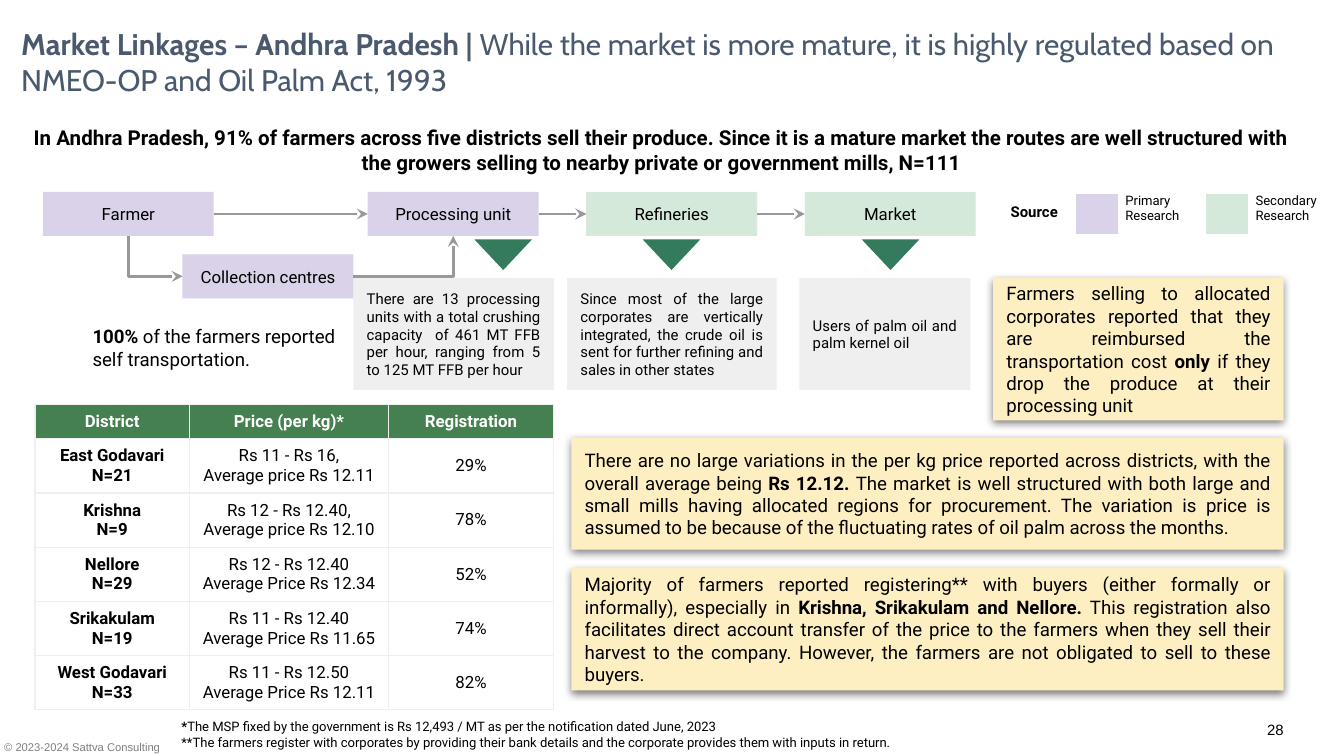
from typing import NamedTuple

from lxml.etree import SubElement
from pptx import Presentation
from pptx.dml.color import RGBColor
from pptx.enum.dml import MSO_THEME_COLOR
from pptx.enum.shapes import MSO_CONNECTOR, MSO_SHAPE
from pptx.enum.text import MSO_ANCHOR, MSO_AUTO_SIZE, PP_ALIGN
from pptx.oxml.ns import qn
from pptx.util import Cm, Pt

BLACK = RGBColor(0x00, 0x00, 0x00)
WHITE = RGBColor(0xFF, 0xFF, 0xFF)
SLATE = RGBColor(0x4A, 0x59, 0x6E)
GREY = RGBColor(0x7F, 0x7F, 0x7F)
ARROW_GREY = RGBColor(0x99, 0x99, 0x99)
PALE_GREY = RGBColor(0xEF, 0xEF, 0xEF)
LILAC = RGBColor(0xD9, 0xD2, 0xE9)
MINT = RGBColor(0xD4, 0xE9, 0xD9)
CREAM = RGBColor(0xFE, 0xEF, 0xC3)
HEADER_GREEN = RGBColor(0x44, 0x80, 0x50)
POINTER_GREEN = RGBColor(0x34, 0x7A, 0x5C)

STEP_WIDTH, STEP_HEIGHT, FLOW_TOP = 3.23, 0.83, 3.63
STEP_PITCH, PROCESSING_LEFT = 4.13, 6.95
CARD_TOP, CARD_HEIGHT = 5.26, 2.11
TOP, LEFT, BOTTOM, RIGHT = range(4)  # connection sites of a rectangle


class Span(NamedTuple):
    text: str
    bold: bool = False


class Area(NamedTuple):
    left: float
    top: float
    width: float
    height: float

    def lengths(self):
        return [Cm(value) for value in self]


class Step(NamedTuple):
    label: str
    left: float
    top: float
    fill: RGBColor


class Panel(NamedTuple):
    area: Area
    spans: list[Span]


class District(NamedTuple):
    name: str
    farmers: int
    prices: str
    average: str
    registration: str


STEPS = [
    Step("Farmer", 0.81, FLOW_TOP, LILAC),
    Step("Collection centres", 3.45, 4.81, LILAC),
    Step("Processing unit", PROCESSING_LEFT, FLOW_TOP, LILAC),
    Step("Refineries", PROCESSING_LEFT + STEP_PITCH, FLOW_TOP, MINT),
    Step("Market", PROCESSING_LEFT + 2 * STEP_PITCH, FLOW_TOP, MINT),
]
POINTER_CENTRES = [9.51, 12.69, 16.83]
CARDS = [
    Panel(Area(6.68, CARD_TOP, 3.79, CARD_HEIGHT), [Span(
        "There are 13 processing units with a total crushing capacity  of 461 MT FFB "
        "per hour, ranging from 5 to 125 MT FFB per hour")]),
    Panel(Area(10.72, CARD_TOP, 3.96, CARD_HEIGHT), [Span(
        "Since most of the large corporates are vertically integrated, the crude oil "
        "is sent for further refining and sales in other states")]),
    Panel(Area(15.11, CARD_TOP, STEP_WIDTH, CARD_HEIGHT),
          [Span("Users of palm oil and palm kernel oil")]),
]
NOTES = [
    Panel(Area(18.77, CARD_TOP, 5.49, 2.69), [
        Span("Farmers selling to allocated corporates reported that they are reimbursed "
             "the transportation cost "),
        Span("only", True),
        Span(" if they drop the produce at their processing unit")]),
    Panel(Area(10.8, 8.28, 13.46, 2.11), [
        Span("There are no large variations in the per kg price reported across "
             "districts, with the overall average being "),
        Span("Rs 12.12. ", True),
        Span("The market is well structured with both large and small mills having "
             "allocated regions for procurement. The variation is price is assumed to be "
             "because of the fluctuating rates of oil palm across the months.")]),
    Panel(Area(10.8, 10.74, 13.46, 2.31), [
        Span("Majority of farmers reported registering** with buyers (either formally or "
             "informally), especially in "),
        Span("Krishna, Srikakulam and Nellore. ", True),
        Span("This registration also facilitates direct account transfer of the price to "
             "the farmers when they sell their harvest to the company. However, the "
             "farmers are not obligated to sell to these buyers.")]),
]
DISTRICTS = [
    District("East Godavari", 21, "Rs 11 - Rs 16,", "Average price Rs 12.11", "29%"),
    District("Krishna", 9, "Rs 12 - Rs 12.40,", "Average price Rs 12.10", "78%"),
    District("Nellore", 29, "Rs 12 - Rs 12.40", "Average Price Rs 12.34", "52%"),
    District("Srikakulam", 19, "Rs 11 - Rs 12.40", "Average Price Rs 11.65", "74%"),
    District("West Godavari", 33, "Rs 11 - Rs 12.50", "Average Price Rs 12.11", "82%"),
]


def write(frame, paragraphs, *, size, font="Roboto", color=BLACK, align=PP_ALIGN.LEFT):
    """Fill a text frame; each paragraph is a list of spans."""
    frame.word_wrap = True
    for index, spans in enumerate(paragraphs):
        para = frame.paragraphs[0] if index == 0 else frame.add_paragraph()
        para.alignment = align
        for span in spans:
            run = para.add_run()
            run.text = span.text
            run.font.name, run.font.size = font, Pt(size)
            run.font.bold, run.font.color.rgb = span.bold, color


def set_margins(holder, across: float, down: float):
    holder.margin_left = holder.margin_right = Cm(across)
    holder.margin_top = holder.margin_bottom = Cm(down)


def add_text(page, area: Area, paragraphs, *, anchor=MSO_ANCHOR.TOP, margins=(0.25, 0.25), **style):
    frame = page.shapes.add_textbox(*area.lengths()).text_frame
    set_margins(frame, *margins)
    frame.vertical_anchor = anchor
    write(frame, paragraphs, **style)


def add_block(page, area: Area, fill: RGBColor, kind=MSO_SHAPE.RECTANGLE):
    block = page.shapes.add_shape(kind, *area.lengths())
    block.shadow.inherit = False
    block.fill.solid()
    block.fill.fore_color.rgb = fill
    block.line.fill.background()
    return block


def add_panel(page, panel: Panel, fill: RGBColor, *, size, align=PP_ALIGN.JUSTIFY):
    block = add_block(page, panel.area, fill)
    set_margins(block.text_frame, 0.25, 0.25)
    block.text_frame.vertical_anchor = MSO_ANCHOR.MIDDLE
    write(block.text_frame, [panel.spans], size=size, align=align)
    return block


def add_drop_shadow(block):
    effects = block._element.spPr.find(qn("a:effectLst"))
    shadow = SubElement(effects, qn("a:outerShdw"), blurRad=str(Pt(4.5)), dist=str(Pt(1.5)),
                        dir="5400000", algn="bl", rotWithShape="0")
    shade = SubElement(shadow, qn("a:srgbClr"), val=str(BLACK))
    SubElement(shade, qn("a:alpha"), val="50000")


def add_arrow(page, start, start_site: int, end, end_site: int):
    """Link two steps; an arrow that starts or ends at a bottom site has one bend."""
    bent = BOTTOM in (start_site, end_site)
    kind = MSO_CONNECTOR.ELBOW if bent else MSO_CONNECTOR.STRAIGHT
    arrow = page.shapes.add_connector(kind, 0, 0, 0, 0)
    arrow.begin_connect(start, start_site)
    arrow.end_connect(end, end_site)
    arrow.line.color.rgb = ARROW_GREY
    arrow.line.width = Pt(1.5)
    properties = arrow._element.spPr
    SubElement(arrow.line._get_or_add_ln(), qn("a:tailEnd"), type="stealth")
    SubElement(properties, qn("a:effectLst"))
    if bent:
        properties.find(qn("a:prstGeom")).set("prst", "bentConnector2")
    if start_site == BOTTOM:  # leaves downwards: a quarter turn about the centre
        left, top, width, height = arrow.left, arrow.top, arrow.width, arrow.height
        arrow.left, arrow.top = left + (width - height) // 2, top + (height - width) // 2
        arrow.width, arrow.height = height, width
        frame = properties.find(qn("a:xfrm"))
        frame.set("rot", "16200000")
        frame.set("flipH", "1")


def add_table(page, left: float, top: float, widths, heights):
    table = page.shapes.add_table(len(heights), len(widths), Cm(left), Cm(top),
                                  Cm(sum(widths)), Cm(sum(heights))).table
    table.first_row = table.horz_banding = False
    for column, width in zip(table.columns, widths):
        column.width = Cm(width)
    for row, height in zip(table.rows, heights):
        row.height = Cm(height)
    return table


def fill_cell(cell, fill: RGBColor, margins=(0.25, 0.13)):
    set_margins(cell, *margins)
    cell.fill.solid()
    cell.fill.fore_color.rgb = fill


def add_borders(cell):
    properties = cell._tc.get_or_add_tcPr()
    for index, side in enumerate(("a:lnL", "a:lnR", "a:lnT", "a:lnB")):
        line = properties.makeelement(qn(side), {"w": str(Pt(0.75))})
        SubElement(SubElement(line, qn("a:solidFill")), qn("a:srgbClr"), val=str(PALE_GREY))
        properties.insert(index, line)


def add_district_table(page):
    table = add_table(page, 0.66, 7.65, [2.92, 3.76, 3.12], [0.62] + [1.0] * len(DISTRICTS))
    rows = [[[[Span(text, True)]] for text in ("District", "Price (per kg)*", "Registration")]]
    rows += [[[[Span(district.name, True)], [Span(f"N={district.farmers}", True)]],
              [[Span(district.prices)], [Span(district.average)]],
              [[Span(district.registration)]]] for district in DISTRICTS]
    for row_index, row in enumerate(rows):
        header = row_index == 0
        for column_index, paragraphs in enumerate(row):
            cell = table.cell(row_index, column_index)
            fill_cell(cell, HEADER_GREEN if header else WHITE)
            cell.vertical_anchor = MSO_ANCHOR.TOP if header else MSO_ANCHOR.MIDDLE
            write(cell.text_frame, paragraphs, size=9, align=PP_ALIGN.CENTER,
                  color=WHITE if header else BLACK)
            add_borders(cell)


def add_legend(page):
    add_text(page, Area(18.85, 3.84, 1.45, 0.33), [[Span("Source", True)]], size=8,
             anchor=MSO_ANCHOR.MIDDLE)
    table = add_table(page, 20.32, 3.66, [0.82, 1.64] * 2, [0.78])
    for index, (label, fill) in enumerate([("Primary Research", LILAC), ("Secondary Research", MINT)]):
        swatch, caption = table.cell(0, 2 * index), table.cell(0, 2 * index + 1)
        fill_cell(swatch, fill, (0.13, 0))
        fill_cell(caption, WHITE, (0.13, 0))
        write(caption.text_frame, [[Span(label)]], size=7)


def main():
    deck = Presentation()
    deck.slide_width, deck.slide_height = Cm(25.4), Cm(14.29)
    page = deck.slides.add_slide(deck.slide_layouts[5])
    page.background.fill.solid()
    page.background.fill.fore_color.theme_color = MSO_THEME_COLOR.BACKGROUND_1

    title = page.shapes.title
    title.left, title.top, title.width, title.height = Area(0.15, 0.23, 24.51, 2.31).lengths()
    set_margins(title.text_frame, 0.25, 0.25)
    title.text_frame.vertical_anchor = MSO_ANCHOR.TOP
    title.text_frame.auto_size = MSO_AUTO_SIZE.NONE
    write(title.text_frame, [[
        Span("Market Linkages – Andhra Pradesh | ", True),
        Span("While the market is more mature, it is highly regulated based on NMEO-OP and "
             "Oil Palm Act, 1993")]], size=16, font="Cabin", color=SLATE)
    add_text(page, Area(0.25, 2.41, 24.51, 0.84), [[Span(
        "In Andhra Pradesh, 91% of farmers across five districts sell their produce. Since it "
        "is a mature market the routes are well structured with the growers selling to nearby "
        "private or government mills, N=111", True)]],
        size=11, align=PP_ALIGN.CENTER, anchor=MSO_ANCHOR.MIDDLE)

    for card in CARDS:
        add_panel(page, card, PALE_GREY, size=8)
    for note in NOTES:
        add_drop_shadow(add_panel(page, note, CREAM, size=10))
    farmer, collection, processing, refineries, market = [
        add_panel(page, Panel(Area(step.left, step.top, STEP_WIDTH, STEP_HEIGHT), [Span(step.label)]),
                  step.fill, size=9, align=PP_ALIGN.CENTER) for step in STEPS]
    for start, end in [(farmer, processing), (processing, refineries), (refineries, market)]:
        add_arrow(page, start, RIGHT, end, LEFT)
    add_arrow(page, farmer, BOTTOM, collection, LEFT)
    add_arrow(page, collection, RIGHT, processing, BOTTOM)
    for centre in POINTER_CENTRES:
        pointer = add_block(page, Area(centre - 0.29, 4.27, 0.58, 1.09), POINTER_GREEN, MSO_SHAPE.PENTAGON)
        pointer.adjustments[0] = 1
        pointer.rotation = 90

    add_text(page, Area(1.5, 5.92, 5.49, 1.3), [[
        Span("100% ", True), Span("of the farmers reported self transportation.")]],
        size=10, anchor=MSO_ANCHOR.MIDDLE)
    add_district_table(page)
    add_legend(page)
    add_text(page, Area(3.18, 13.34, 17.15, 1.12), [
        [Span("*", True), Span("The MSP fixed by the government is Rs 12,493 / MT as per the "
                               "notification dated June, 2023")],
        [Span("**The farmers register with corporates by providing their bank details and the "
              "corporate provides them with inputs in return.")]], size=7)
    add_text(page, Area(-0.1, 13.89, 3.71, 0.46), [[Span("© 2023-2024 Sattva Consulting")]],
             size=6, font="Arial", color=GREY, margins=(0.18, 0.1))
    add_text(page, Area(22.89, 13.54, 1.52, 1.09), [[Span("28")]], size=8, font="Arial",
             align=PP_ALIGN.RIGHT, margins=(0.15, 0.08))
    deck.save("out.pptx")


if __name__ == "__main__":
    main()
